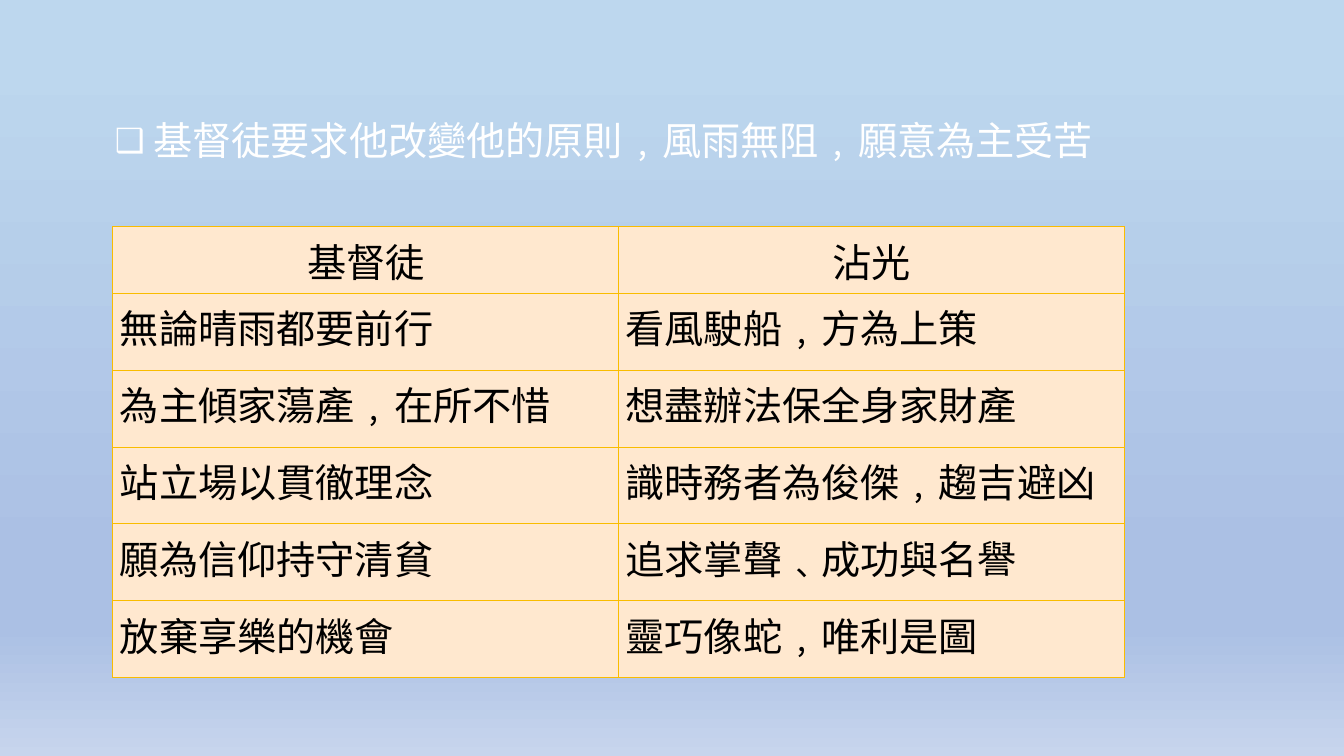
from lxml.etree import SubElement
from pptx import Presentation
from pptx.dml.color import RGBColor
from pptx.enum.text import MSO_ANCHOR, MSO_AUTO_SIZE, PP_ALIGN
from pptx.oxml.ns import qn
from pptx.util import Inches, Pt

WHITE = RGBColor(0xFF, 0xFF, 0xFF)
BLACK = RGBColor(0x00, 0x00, 0x00)
GOLD = RGBColor(0xF9, 0xBC, 0x00)
CREAM = RGBColor(0xFF, 0xE8, 0xCF)
SKY = RGBColor(0xBD, 0xD7, 0xEE)
PERIWINKLE = RGBColor(0xAB, 0xC0, 0xE4)
MIST = RGBColor(0xC7, 0xD5, 0xED)

BACKGROUND_STOPS = [(7, SKY), (74, PERIWINKLE), (83, PERIWINKLE), (100, MIST)]
STATEMENT = "基督徒要求他改變他的原則﹐風雨無阻﹐願意為主受苦"
COMPARISON = [
    ("基督徒", "沾光"),
    ("無論晴雨都要前行", "看風駛船﹐方為上策"),
    ("為主傾家蕩產﹐在所不惜", "想盡辦法保全身家財產"),
    ("站立場以貫徹理念", "識時務者為俊傑﹐趨吉避凶"),
    ("願為信仰持守清貧", "追求掌聲﹑成功與名譽"),
    ("放棄享樂的機會", "靈巧像蛇﹐唯利是圖"),
]


def set_font(para, name, color):
    para.font.name = name
    para.font.size = Pt(28)
    para.font.bold = False
    para.font.color.rgb = color


def add_color(parent, color):
    SubElement(parent, qn("a:srgbClr"), val=str(color))


def paint_background(slide):
    fill = slide.background.fill
    fill.gradient()
    fill.gradient_angle = 270
    stop_list = slide.element.find(".//" + qn("a:gsLst"))
    for stop in list(stop_list):
        stop_list.remove(stop)
    for percent, color in BACKGROUND_STOPS:
        add_color(SubElement(stop_list, qn("a:gs"), pos=str(percent * 1000)), color)


def add_square_bullet(para):
    properties = para._p.get_or_add_pPr()
    properties.set("marL", str(Inches(0.5)))
    properties.set("indent", str(Inches(-0.38)))
    add_color(SubElement(properties, qn("a:buClr")), WHITE)
    SubElement(properties, qn("a:buSzPct"), val="85000")
    SubElement(properties, qn("a:buChar"), char="❑")


def fill_statement(body, left, top, width, height):
    body.left, body.top, body.width, body.height = left, top, width, height
    frame = body.text_frame
    frame.word_wrap = True
    frame.auto_size = MSO_AUTO_SIZE.NONE
    frame.vertical_anchor = MSO_ANCHOR.TOP
    para = frame.paragraphs[0]
    para.text = STATEMENT
    add_square_bullet(para)
    para.line_spacing = 0.9
    para.space_before = Pt(0)
    set_font(para, "Calibri", WHITE)


def style_cell(cell):
    properties = cell._tc.get_or_add_tcPr()
    for side in ("a:lnL", "a:lnR", "a:lnT", "a:lnB"):
        line = SubElement(properties, qn(side), w=str(Pt(0.75)))
        add_color(SubElement(line, qn("a:solidFill")), GOLD)
    cell.fill.solid()
    cell.fill.fore_color.rgb = CREAM
    cell.margin_left = cell.margin_right = Inches(0.07)
    cell.margin_top = cell.margin_bottom = Inches(0.05)


def add_comparison(slide, left, top, width, height):
    header_height = Inches(0.46)
    rows, columns = len(COMPARISON), len(COMPARISON[0])
    table = slide.shapes.add_table(rows, columns, left, top, width, height).table
    table.first_row = table.horz_banding = False
    for index, row in enumerate(table.rows):
        row.height = header_height if index == 0 else (height - header_height) // (rows - 1)
        for cell, text in zip(row.cells, COMPARISON[index]):
            style_cell(cell)
            cell.text = text
            para = cell.text_frame.paragraphs[0]
            para.alignment = PP_ALIGN.CENTER if index == 0 else PP_ALIGN.JUSTIFY
            set_font(para, "Arial", BLACK)


def build_slide(deck):
    slide = deck.slides.add_slide(deck.slide_layouts[1])
    title = slide.shapes.title.element
    title.getparent().remove(title)
    paint_background(slide)
    fill_statement(slide.placeholders[1], Inches(0.92), Inches(1.16), Inches(11.5), Inches(1.29))
    add_comparison(slide, Inches(1.12), Inches(2.25), Inches(10.03), Inches(4.27))


def main():
    deck = Presentation()
    deck.slide_width, deck.slide_height = Inches(13.33), Inches(7.5)
    build_slide(deck)
    deck.save("out.pptx")


if __name__ == "__main__":
    main()
